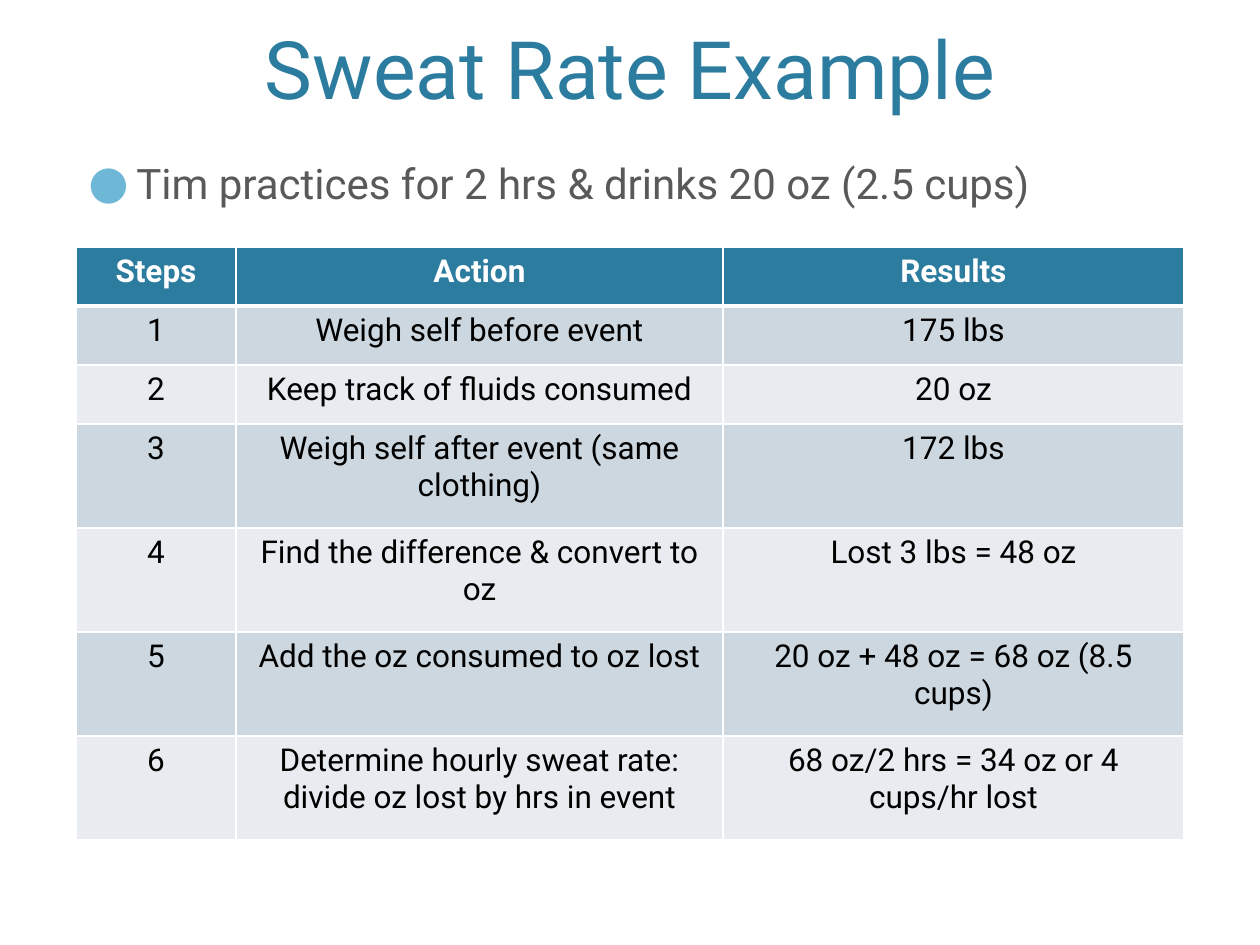
from lxml import etree
from pptx import Presentation
from pptx.dml.color import RGBColor
from pptx.enum.text import MSO_ANCHOR, PP_ALIGN
from pptx.oxml.ns import qn
from pptx.util import Emu, Pt

CENTER = PP_ALIGN.CENTER
LEFT = PP_ALIGN.LEFT
TOP = MSO_ANCHOR.TOP
BOTTOM = MSO_ANCHOR.BOTTOM

TEAL = RGBColor(0x2C, 0x7C, 0x9F)
SKY = RGBColor(0x6F, 0xB7, 0xD7)
GRAY = RGBColor(0x59, 0x59, 0x59)
BLACK = RGBColor(0x00, 0x00, 0x00)
WHITE = RGBColor(0xFF, 0xFF, 0xFF)
BAND_DARK = RGBColor(0xCD, 0xD7, 0xDF)
BAND_LIGHT = RGBColor(0xE8, 0xEC, 0xF0)

EMU_PER_PX = 914400 // 126
FONT = "Roboto"

STEPS = [
    ("Steps", "Action", "Results"),
    ("1", "Weigh self before event", "175 lbs"),
    ("2", "Keep track of fluids consumed", "20 oz"),
    ("3", "Weigh self after event (same clothing)", "172 lbs"),
    ("4", "Find the difference & convert to oz", "Lost 3 lbs = 48 oz"),
    ("5", "Add the oz consumed to oz lost", "20 oz + 48 oz = 68 oz (8.5 cups)"),
    ("6", "Determine hourly sweat rate: divide oz lost by hrs in event",
     "68 oz/2 hrs = 34 oz or 4 cups/hr lost"),
]
COLUMN_WIDTHS = [160, 487, 461]
ROW_HEIGHTS = [59] * 3 + [104] * 4


def px(length):
    return Emu(length * EMU_PER_PX)


class SlideBuilder:
    def __init__(self, slide):
        self.slide = slide

    def style(self, paragraph, size, color, align, bold=False):
        paragraph.alignment = align
        font = paragraph.font
        font.name = FONT
        font.size = Pt(size)
        font.bold = bold
        font.color.rgb = color

    def text(self, words, left, top, width, height, size, color,
             align=LEFT, anchor=TOP):
        box = self.slide.shapes.add_textbox(
            px(left), px(top), px(width), px(height))
        frame = box.text_frame
        frame.word_wrap = True
        frame.vertical_anchor = anchor
        paragraph = frame.paragraphs[0]
        paragraph.text = words
        self.style(paragraph, size, color, align)
        return paragraph

    def bullet(self, words, left, top, width, height, size, color):
        paragraph = self.text(words, left, top, width, height, size, color)
        paragraph.space_before = Pt(20)
        properties = paragraph._p.get_or_add_pPr()
        properties.set("marL", str(px(48)))
        properties.set("indent", str(px(-48)))
        marks = [
            etree.Element(qn("a:buClr")),
            etree.Element(qn("a:buSzPct"), val="110000"),
            etree.Element(qn("a:buFont"), typeface=FONT),
            etree.Element(qn("a:buChar"), char="●"),
        ]
        etree.SubElement(marks[0], qn("a:srgbClr"), val=str(SKY))
        properties.find(qn("a:defRPr")).getprevious().addnext(marks[0])
        for previous, mark in zip(marks, marks[1:]):
            previous.addnext(mark)

    def borders(self, cell, top, bottom):
        properties = cell._tc.get_or_add_tcPr()
        sides = {"a:lnL": 1, "a:lnR": 1, "a:lnT": top, "a:lnB": bottom}
        for position, (side, width) in enumerate(sides.items()):
            line = etree.Element(qn(side), w=str(Pt(width)))
            fill = etree.SubElement(line, qn("a:solidFill"))
            etree.SubElement(fill, qn("a:srgbClr"), val=str(WHITE))
            properties.insert(position, line)

    def table(self, rows, left, top, widths, heights, size):
        table = self.slide.shapes.add_table(
            len(rows), len(widths), px(left), px(top),
            px(sum(widths)), px(sum(heights))).table
        for column, width in zip(table.columns, widths):
            column.width = px(width)
        for index, (row, height, words) in enumerate(
                zip(table.rows, heights, rows)):
            row.height = px(height)
            header = index == 0
            band = BAND_DARK if index % 2 else BAND_LIGHT
            for cell, value in zip(row.cells, words):
                cell.text = value
                self.style(cell.text_frame.paragraphs[0], size,
                           WHITE if header else BLACK, CENTER, header)
                cell.fill.solid()
                cell.fill.fore_color.rgb = TEAL if header else band
                self.borders(cell, 3 if index == 1 else 1, 3 if header else 1)


def main():
    presentation = Presentation()
    presentation.slide_width = px(1260)
    presentation.slide_height = px(945)
    builder = SlideBuilder(
        presentation.slides.add_slide(presentation.slide_layouts[6]))
    builder.text("Sweat Rate Example", 76, 15, 1108, 107, 46, TEAL,
                 CENTER, BOTTOM)
    builder.bullet("Tim practices for 2 hrs & drinks 20 oz (2.5 cups)",
                   76, 151, 1108, 748, 24, GRAY)
    builder.table(STEPS, 76, 247, COLUMN_WIDTHS, ROW_HEIGHTS, 18)
    presentation.save("out.pptx")


if __name__ == "__main__":
    main()
